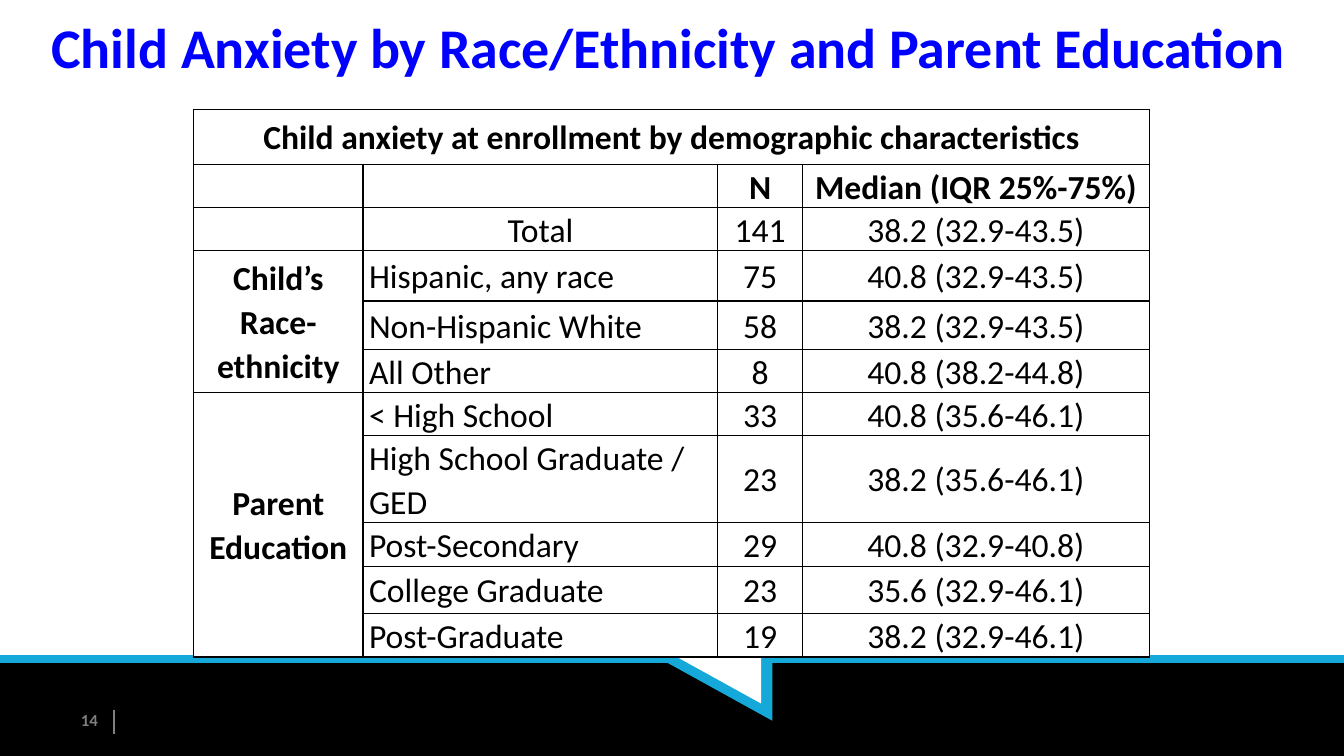
"""Build the slide on child anxiety by race/ethnicity and parent education."""
import dataclasses

import lxml.etree
import pptx
import pptx.dml.color
import pptx.enum.shapes
import pptx.enum.text
import pptx.oxml.ns
import pptx.util

Inches = pptx.util.Inches
Pt = pptx.util.Pt
Shape = pptx.enum.shapes.MSO_SHAPE
Align = pptx.enum.text.PP_ALIGN
Anchor = pptx.enum.text.MSO_ANCHOR
qn = pptx.oxml.ns.qn


@dataclasses.dataclass(frozen=True)
class Theme:
    """Colours, font and type sizes of the slide."""
    black: str = "000000"
    white: str = "FFFFFF"
    accent: str = "14A9D8"
    title: str = "0000FF"
    grey: str = "808080"
    number: str = "7F7F7F"
    font: str = "Calibri"
    title_size: int = 40
    table_size: int = 24
    number_size: int = 12


THEME = Theme()
COLUMN_WIDTHS = (1.68, 3.52, 0.84, 3.44)
ROW_HEIGHTS = (0.54, 0.39, 0.34, 0.5, 0.48, 0.39, 0.39, 0.7, 0.44, 0.47, 0.35)
ROWS = (
    ("Child anxiety at enrollment by demographic characteristics", "", "", ""),
    ("", "", "N", "Median (IQR 25%-75%)"),
    ("", "Total", "141", "38.2 (32.9-43.5)"),
    ("Child’s\nRace-ethnicity", "Hispanic, any race", "75", "40.8 (32.9-43.5)"),
    ("", "Non-Hispanic White", "58", "38.2 (32.9-43.5)"),
    ("", "All Other", "8", "40.8 (38.2-44.8)"),
    ("Parent Education", "< High School", "33", "40.8 (35.6-46.1)"),
    ("", "High School Graduate / GED", "23", "38.2 (35.6-46.1)"),
    ("", "Post-Secondary", "29", "40.8 (32.9-40.8)"),
    ("", "College Graduate", "23", "35.6 (32.9-46.1)"),
    ("", "Post-Graduate", "19", "38.2 (32.9-46.1)"),
)
MERGES = (((0, 0), (0, 3)), ((3, 0), (5, 0)), ((6, 0), (10, 0)))
HEADER_ROWS = 2
FIRST_GROUP_ROW = 3


def rgb(colour):
    """Turn a hex string into a colour."""
    return pptx.dml.color.RGBColor.from_string(colour)


def style_font(font, size, colour, bold):
    """Set the typeface, size, colour and weight of a font."""
    font.name = THEME.font
    font.size = Pt(size)
    font.bold = bold
    font.color.rgb = rgb(colour)


def add_filled_shape(page, kind, bounds, colour, rotation=0):
    """Add a plain shape without outline."""
    shape = page.shapes.add_shape(kind, *map(Inches, bounds))
    shape.shadow.inherit = False
    shape.fill.solid()
    shape.fill.fore_color.rgb = rgb(colour)
    shape.line.fill.background()
    shape.rotation = rotation


def add_rule(page, start, end, colour, width):
    """Add a straight line between two points."""
    straight = pptx.enum.shapes.MSO_CONNECTOR.STRAIGHT
    rule = page.shapes.add_connector(straight, *map(Inches, start + end))
    rule.line.color.rgb = rgb(colour)
    rule.line.width = Pt(width)
    lxml.etree.SubElement(rule._element.spPr, qn("a:effectLst"))


def add_label(page, bounds, text, size, colour, alignment, anchor):
    """Add a bold one-line text box."""
    box = page.shapes.add_textbox(*map(Inches, bounds))
    box.text_frame.word_wrap = True
    box.text_frame.vertical_anchor = anchor
    para = box.text_frame.paragraphs[0]
    para.alignment = alignment
    span = para.add_run()
    span.text = text
    style_font(span.font, size, colour, True)


def add_borders(cell):
    """Draw a thin black line on each side of a cell."""
    properties = cell._tc.get_or_add_tcPr()
    for position, side in enumerate(("lnL", "lnR", "lnT", "lnB")):
        border = lxml.etree.Element(qn(f"a:{side}"), w=str(Pt(1)))
        fill = lxml.etree.SubElement(border, qn("a:solidFill"))
        lxml.etree.SubElement(fill, qn("a:srgbClr"), val=THEME.black)
        properties.insert(position, border)


def fill_cell(cell, text, alignment, bold):
    """Write and format one table cell."""
    cell.margin_left = cell.margin_right = Inches(0.06)
    cell.margin_top = cell.margin_bottom = 0
    cell.vertical_anchor = Anchor.MIDDLE
    cell.fill.solid()
    cell.fill.fore_color.rgb = rgb(THEME.white)
    add_borders(cell)
    frame = cell.text_frame
    for index, line in enumerate(text.split("\n")):
        para = frame.add_paragraph() if index else frame.paragraphs[0]
        para.alignment = alignment
        para.line_spacing = 1.07
        if line:
            span = para.add_run()
            span.text = line
            style_font(span.font, THEME.table_size, THEME.black, bold)


def add_anxiety_table(page):
    """Add the table of medians by demographic group."""
    frame = page.shapes.add_table(
        len(ROWS), len(COLUMN_WIDTHS), Inches(1.92), Inches(1.09),
        Inches(sum(COLUMN_WIDTHS)), Inches(sum(ROW_HEIGHTS)))
    table = frame.table
    table.first_row = table.horz_banding = False
    for column, width in zip(table.columns, COLUMN_WIDTHS):
        column.width = Inches(width)
    for row, height in zip(table.rows, ROW_HEIGHTS):
        row.height = Inches(height)
    for row_index, texts in enumerate(ROWS):
        for column_index, text in enumerate(texts):
            is_group = column_index == 1 and row_index >= FIRST_GROUP_ROW
            fill_cell(table.cell(row_index, column_index), text,
                      Align.LEFT if is_group else Align.CENTER,
                      row_index < HEADER_ROWS or column_index == 0)
    for first, last in MERGES:
        table.cell(*first).merge(table.cell(*last))


def add_footer(page):
    """Add the black band, its pointer and the slide number."""
    add_filled_shape(page, Shape.RECTANGLE, (0, 6.54, 13.33, 0.96), THEME.black)
    add_rule(page, (0, 6.54), (13.33, 6.54), THEME.accent, 6)
    add_filled_shape(page, Shape.RIGHT_TRIANGLE, (6.61, 6.57, 1.05, 0.58), THEME.accent, 180)
    add_filled_shape(page, Shape.RIGHT_TRIANGLE, (6.5, 6.4, 1.05, 0.58), THEME.white, 180)
    add_rule(page, (1.13, 7.04), (1.13, 7.28), THEME.grey, 1)
    add_label(page, (0.31, 6.94, 0.76, 0.4), "14", THEME.number_size,
              THEME.number, Align.RIGHT, Anchor.MIDDLE)


def main():
    """Build and save the deck."""
    deck = pptx.Presentation()
    deck.slide_width = Inches(13.33)
    deck.slide_height = Inches(7.5)
    page = deck.slides.add_slide(deck.slide_layouts[6])
    add_footer(page)
    add_anxiety_table(page)
    add_label(page, (0.41, 0.07, 12.51, 1.25),
              "Child Anxiety by Race/Ethnicity and Parent Education",
              THEME.title_size, THEME.title, Align.LEFT, Anchor.TOP)
    deck.save("out.pptx")


if __name__ == "__main__":
    main()
